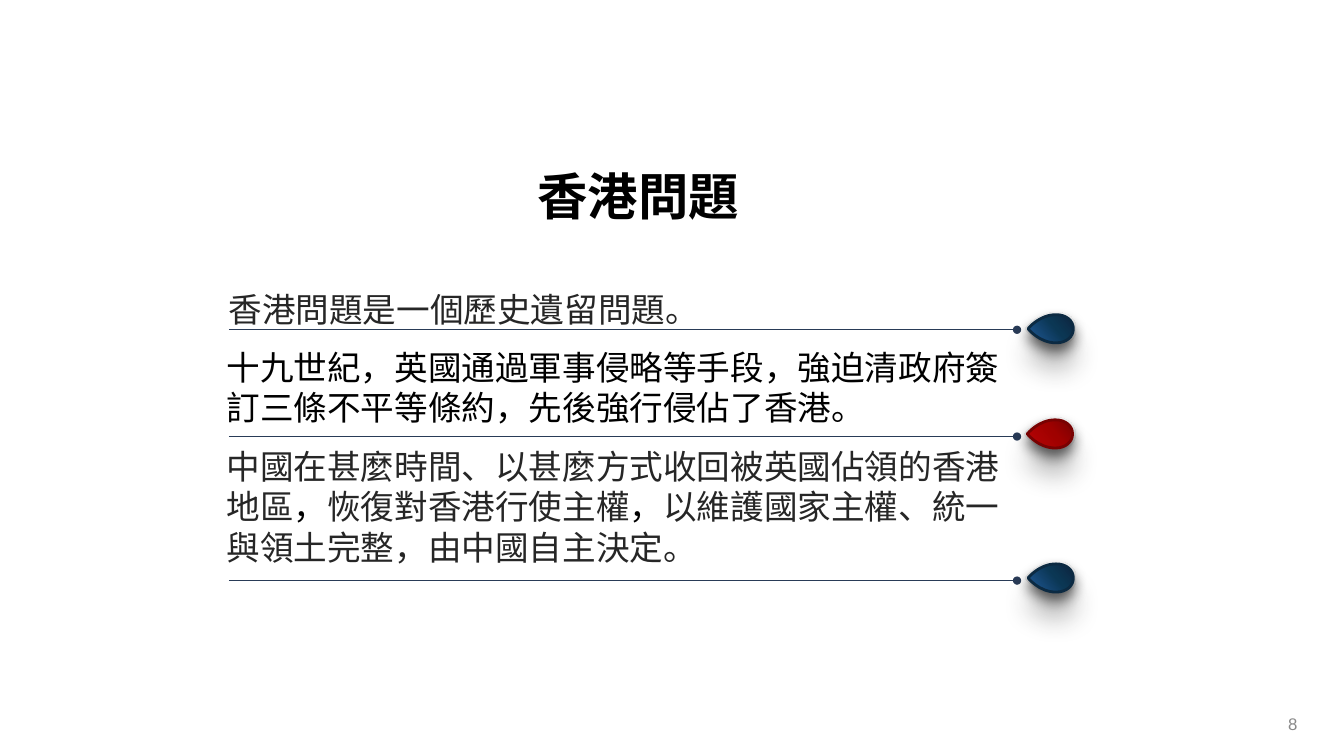
from dataclasses import dataclass

from lxml import etree
from pptx import Presentation
from pptx import util as u
from pptx.dml.color import RGBColor
from pptx.enum import shapes, text
from pptx.oxml import ns


@dataclass(frozen=True)
class Theme:
    cjk: str = "Noto Sans CJK SC"
    latin: str = "Arial"
    black: str = "000000"
    ink: str = "262626"
    muted: str = "898989"
    rule: str = "293B57"
    rim_stops: tuple = ((0, "DADADA"), (100, "FFFFFF"))
    blue_stops: tuple = ((12, "1D528B"), (59, "0B3754"), (100, "0D243F"))
    blue_edge: str = "0C2A42"
    red_stops: tuple = ((12, "B30304"), (59, "9F0100"), (100, "780202"))
    red_edge: str = "780202"
    title: int = 36
    body: int = 24
    small: int = 12


TIP, TOP, SIDE, BOTTOM = (0, 0.5), (0.62, 0), (1, 0.5), (0.62, 1)
DROP_CURVES = (
    (TIP, (0.24, 0), TOP),
    ((0.85, 0), (1, 0.22), SIDE),
    ((1, 0.78), (0.85, 1), BOTTOM),
    ((0.24, 1), TIP, TIP),
)


def add_xml(parent, tag, **attrs):
    el = etree.SubElement(parent, ns.qn(tag))
    for name, value in attrs.items():
        el.set(name, str(value))
    return el


def add_run(p, words, *, font, size, color, bold=False):
    r = p.add_run()
    r.text = words
    r.font.name = font
    r.font.size = u.Pt(size)
    r.font.bold = bold
    r.font.color.rgb = RGBColor.from_string(color)
    add_xml(r.font._element, "a:ea", typeface=font)


def round_outline(sp):
    outline = sp._element.spPr.find(".//" + ns.qn("a:pathLst"))[0]
    for line in outline.findall(ns.qn("a:lnTo")):
        outline.remove(line)
    close = outline.find(ns.qn("a:close"))
    for points in DROP_CURVES:
        curve = add_xml(outline, "a:cubicBezTo")
        for x, y in points:
            add_xml(curve, "a:pt", x=round(x * sp.width), y=round(y * sp.height))
    outline.append(close)


class Deck:
    def __init__(self, theme):
        self.theme = theme
        self.prs = Presentation()
        self.prs.slide_width, self.prs.slide_height = u.Cm(33.87), u.Cm(19.05)
        self.slide = self.prs.slides.add_slide(self.prs.slide_layouts[6])

    def text(self, box, runs, *, size, font=None, bold=False, align=None,
             anchor=text.MSO_ANCHOR.TOP, spacing=None):
        sp = self.slide.shapes.add_textbox(*map(u.Cm, box))
        tf = sp.text_frame
        tf.word_wrap = True
        tf.auto_size = text.MSO_AUTO_SIZE.SHAPE_TO_FIT_TEXT
        tf.vertical_anchor = anchor
        p = tf.paragraphs[0]
        p.alignment = align
        p.line_spacing = spacing
        for words, color in runs:
            add_run(p, words, font=font or self.theme.cjk, size=size, color=color, bold=bold)

    def rule(self, left, right, y):
        sp = self.slide.shapes.add_connector(
            shapes.MSO_CONNECTOR.STRAIGHT, u.Cm(left), u.Cm(y), u.Cm(right), u.Cm(y))
        sp.line.color.rgb = RGBColor.from_string(self.theme.rule)
        sp.line.width = u.Pt(1)
        add_xml(sp.line._get_or_add_ln(), "a:tailEnd", type="oval")
        add_xml(sp._element.spPr, "a:effectLst")

    def drop(self, group, box, *, stops, angle, shadow, edge=None):
        left, top, w, h = box
        points = [(u.Cm(left + x * w), u.Cm(top + y * h)) for x, y in (TIP, TOP, SIDE, BOTTOM)]
        fb = group.shapes.build_freeform(*points[0], scale=1.0)
        fb.add_line_segments(points[1:], close=True)
        sp = fb.convert_to_shape()
        round_outline(sp)
        sp.fill.gradient()
        sp.fill.gradient_angle = angle
        gs_list = sp._element.spPr.find(".//" + ns.qn("a:gsLst"))
        for gs in list(gs_list):
            gs_list.remove(gs)
        for pos, color in stops:
            add_xml(add_xml(gs_list, "a:gs", pos=pos * 1000), "a:srgbClr", val=color)
        if edge:
            sp.line.color.rgb = RGBColor.from_string(edge)
            sp.line.width = u.Pt(2)
        else:
            sp.line.fill.background()
        sp.shadow.inherit = False
        color, alpha, blur, dist = shadow
        outer = add_xml(sp._element.spPr.find(ns.qn("a:effectLst")), "a:outerShdw",
                        blurRad=u.Pt(blur), dist=u.Pt(dist), dir=90 * 60000,
                        algn="t", rotWithShape=0)
        add_xml(add_xml(outer, "a:srgbClr", val=color), "a:alpha", val=alpha * 1000)

    def marker(self, left, top, stops, edge):
        th = self.theme
        group = self.slide.shapes.add_group_shape()
        self.drop(group, (left, top, 1.3, 0.84), stops=th.rim_stops, angle=90,
                  shadow=(th.ink, 28, 18, 18))
        self.drop(group, (left + 0.08, top + 0.06, 1.14, 0.71), stops=stops, angle=40,
                  edge=edge, shadow=(th.black, 63, 10, 5))


def main():
    th = Theme()
    deck = Deck(th)
    blue, red = (th.blue_stops, th.blue_edge), (th.red_stops, th.red_edge)
    rows = [(8.31, 25.83, 7.87, blue), (11.0, 25.81, 10.52, red), (14.63, 25.83, 14.15, blue)]
    for y, _, _, _ in rows:
        deck.rule(5.77, 25.63, y)
    for _, left, top, colors in rows:
        deck.marker(left, top, *colors)

    deck.text((5.46, 8.62, 20.47, 2.31), [
        ("十九世紀，英國通過軍事侵略等手段，強迫清政府簽訂三條不平等條約，先後強行侵佔了香港。", th.black),
    ], size=th.body)
    deck.text((5.46, 11.11, 20.12, 3.33), [
        ("中國在甚麼時間、以甚麼方式收回被英國佔領的香港地區", th.ink),
        ("，", th.black),
        ("恢復對香港行使主權", th.ink),
        ("，", th.black),
        ("以維護國家主權、統一與領土完整，由中國自主決定。", th.ink),
    ], size=th.body)
    deck.text((5.51, 7.15, 18.69, 1.27), [("香港問題是一個歷史遺留問題。", th.ink)], size=th.body)
    deck.text((9.73, 4.22, 12.7, 1.65), [("香港問題", th.black)], size=th.title,
              bold=True, align=text.PP_ALIGN.CENTER, spacing=0.9)
    deck.text((25.33, 17.73, 7.62, 1.02), [("8", th.muted)], size=th.small, font=th.latin,
              align=text.PP_ALIGN.RIGHT, anchor=text.MSO_ANCHOR.MIDDLE)
    deck.prs.save("out.pptx")


if __name__ == "__main__":
    main()
